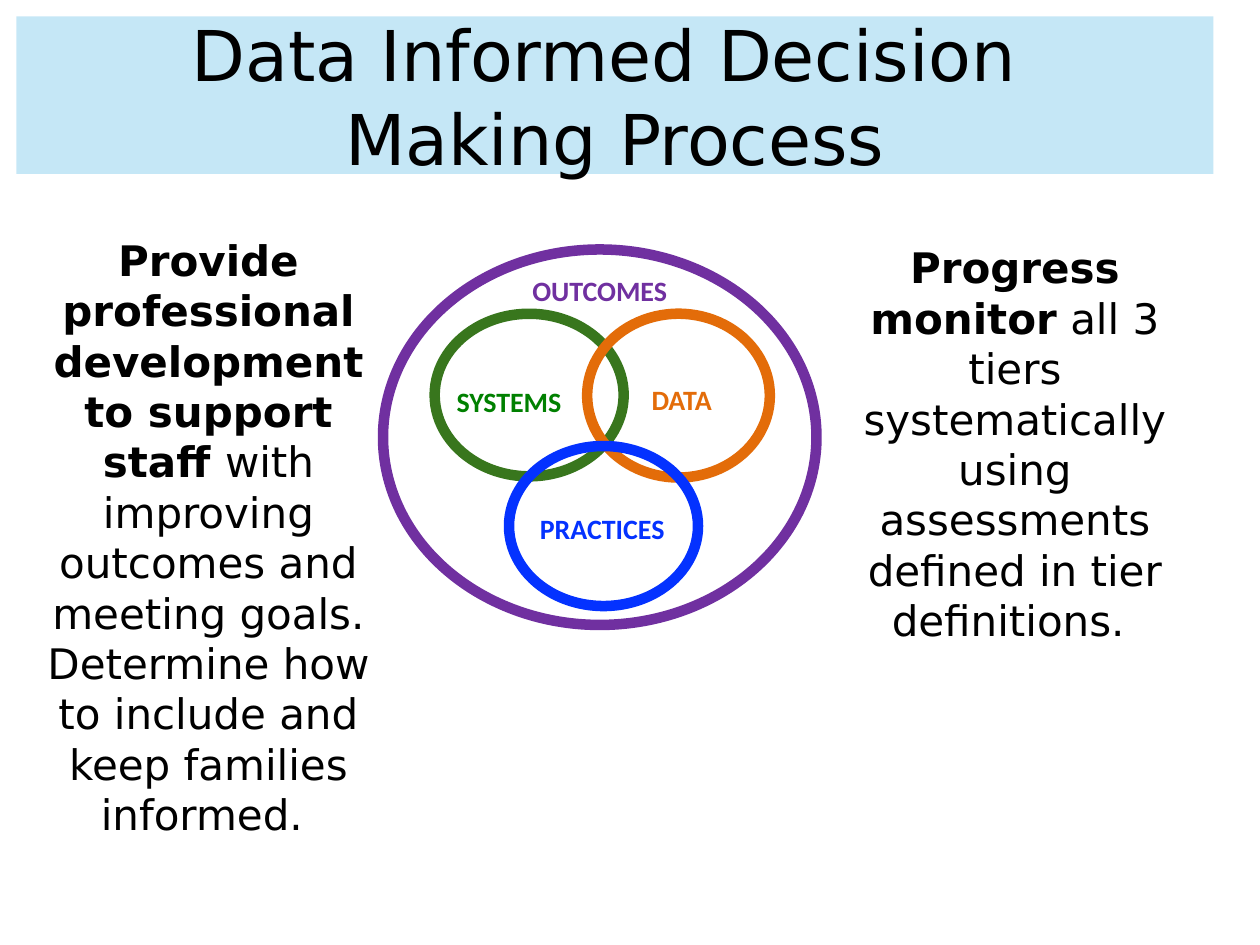
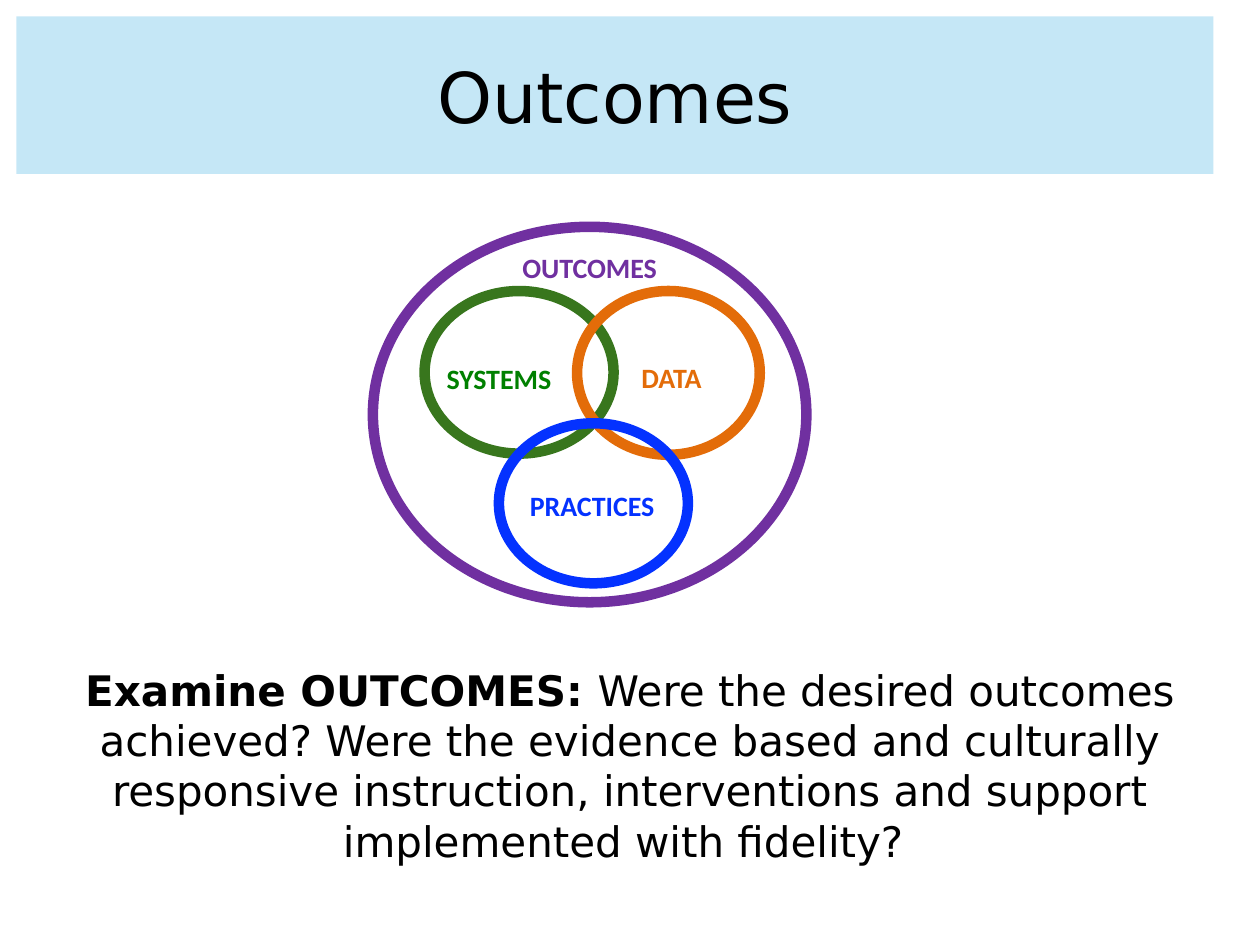
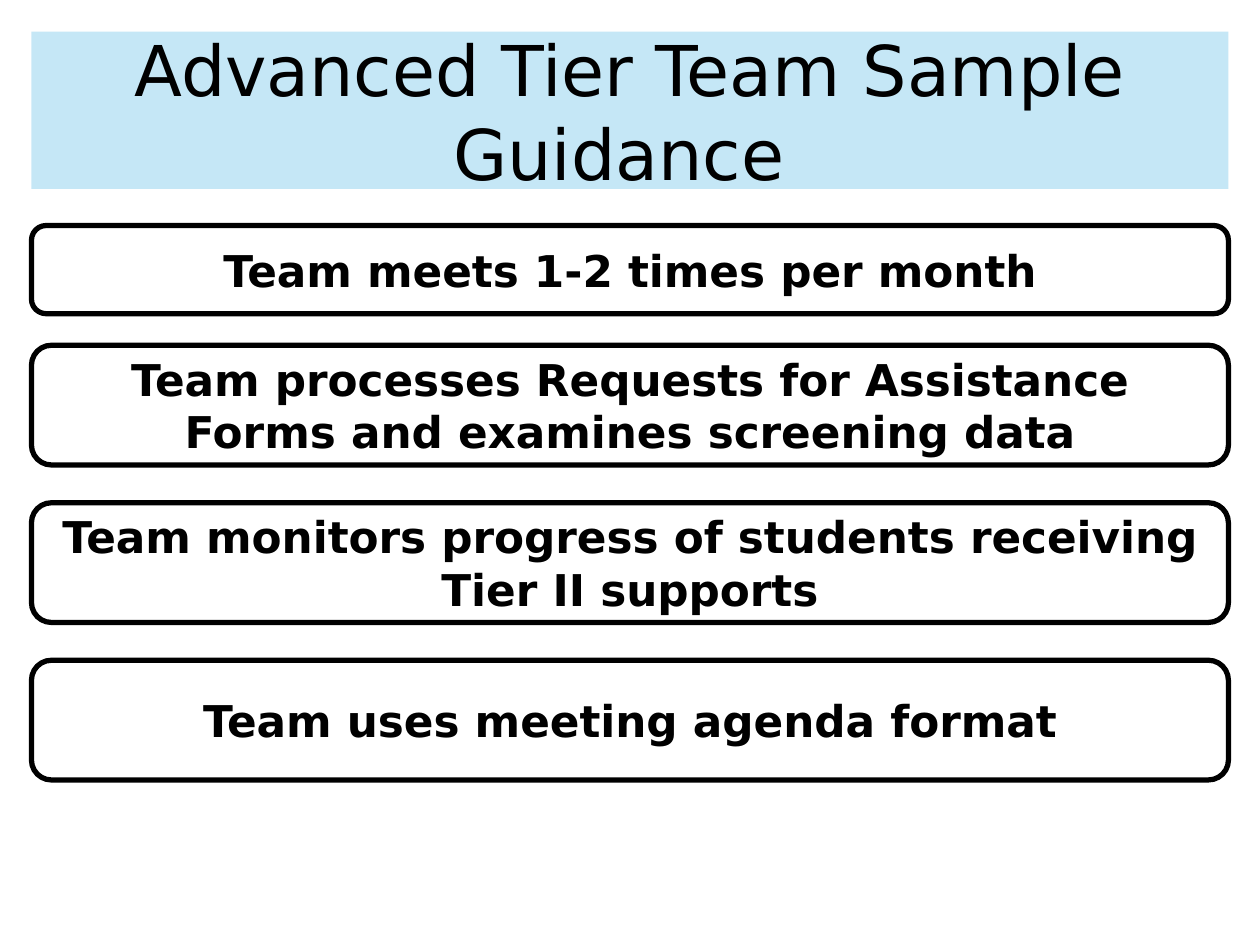
from typing import NamedTuple

from lxml.etree import SubElement
from pptx import Presentation
from pptx.dml.color import RGBColor
from pptx.enum.shapes import MSO_SHAPE
from pptx.enum.text import MSO_ANCHOR, PP_ALIGN
from pptx.oxml.ns import qn
from pptx.util import Inches, Pt

# Shared look
BLACK = RGBColor(0x00, 0x00, 0x00)
BAND_BLUE = RGBColor(0xA9, 0xDC, 0xF2)
PURPLE = RGBColor(0x70, 0x30, 0xA0)
RING_GREEN = RGBColor(0x38, 0x76, 0x1D)
LABEL_GREEN = RGBColor(0x00, 0x80, 0x00)
ORANGE = RGBColor(0xE3, 0x6C, 0x09)
BLUE = RGBColor(0x04, 0x32, 0xFF)
BODY_FONT = "DejaVu Sans"
LABEL_FONT = "Calibri"
BAND_OPACITY = 67


class Box(NamedTuple):
    left: float
    top: float
    width: float
    height: float

    def lengths(self) -> list:
        return [Inches(side) for side in self]

    def shifted(self, left: float, top: float) -> "Box":
        return Box(self.left + left, self.top + top, self.width, self.height)


class Circle(NamedTuple):
    """A ring and its label, placed from the diagram's top left corner."""
    label: str
    ring: Box
    ring_color: RGBColor
    label_box: Box
    label_color: RGBColor


CIRCLES = [
    Circle("OUTCOMES", Box(0, 0, 3.44, 2.98), PURPLE, Box(0.85, 0.09, 1.74, 0.4), PURPLE),
    Circle("SYSTEMS", Box(0.41, 0.51, 1.5, 1.29), RING_GREEN, Box(0.41, 0.97, 1.18, 0.4), LABEL_GREEN),
    Circle("DATA", Box(1.62, 0.51, 1.45, 1.3), ORANGE, Box(1.91, 0.96, 0.92, 0.4), ORANGE),
    Circle("PRACTICES", Box(1, 1.56, 1.5, 1.27), BLUE, Box(1.06, 1.98, 1.36, 0.4), BLUE),
]


def set_text(shape, text: str, size: float, color: RGBColor = BLACK, font: str = BODY_FONT,
             bold: bool = False, lead: str = "", anchor=MSO_ANCHOR.TOP, inset: float = 0.1) -> None:
    """Write one centred paragraph, opening with a bold lead if there is one."""
    frame = shape.text_frame
    frame.word_wrap = True
    frame.vertical_anchor = anchor
    frame.margin_left = frame.margin_right = Inches(0.1)
    frame.margin_top = frame.margin_bottom = Inches(inset)
    paragraph = frame.paragraphs[0]
    paragraph.text = text
    paragraph.alignment = PP_ALIGN.CENTER
    paragraph.font.name = font
    paragraph.font.size = Pt(size)
    paragraph.font.bold = bold
    paragraph.font.color.rgb = color
    if lead:
        paragraph.text = lead
        paragraph.runs[0].font.bold = True
        paragraph.add_run().text = text


def add_outline(shapes, preset: MSO_SHAPE, box: Box, color: RGBColor, width: float):
    outline = shapes.add_shape(preset, *box.lengths())
    outline.shadow.inherit = False
    outline.fill.background()
    outline.line.color.rgb = color
    outline.line.width = Pt(width)
    return outline


def add_title(slide, title: str, margin: float = 0.13) -> None:
    band = slide.shapes.add_shape(MSO_SHAPE.RECTANGLE, *Box(margin, margin, 9.5, 1.25).lengths())
    band.shadow.inherit = False
    band.line.fill.background()
    band.fill.solid()
    band.fill.fore_color.rgb = BAND_BLUE
    color = band._element.spPr.find(qn("a:solidFill"))[0]
    SubElement(color, qn("a:alpha"), val=str(BAND_OPACITY * 1000))
    set_text(band, title, 40, anchor=MSO_ANCHOR.MIDDLE, inset=0.05)


def add_diagram(slide, left: float, top: float) -> None:
    shapes = slide.shapes.add_group_shape().shapes
    for circle in CIRCLES:
        add_outline(shapes, MSO_SHAPE.OVAL, circle.ring.shifted(left, top), circle.ring_color, 6)
    for circle in CIRCLES:
        label = shapes.add_textbox(*circle.label_box.shifted(left, top).lengths())
        set_text(label, circle.label, 16, circle.label_color, LABEL_FONT, bold=True)


def add_body(slide, box: Box, lead: str, text: str) -> None:
    set_text(slide.shapes.add_textbox(*box.lengths()), text, 24, lead=lead)


def add_guidance(slide, box: Box, text: str) -> None:
    card = add_outline(slide.shapes, MSO_SHAPE.ROUNDED_RECTANGLE, box, BLACK, 3)
    set_text(card, text, 25, bold=True, anchor=MSO_ANCHOR.MIDDLE)


def main() -> None:
    deck = Presentation()
    deck.slide_width, deck.slide_height = Inches(10), Inches(7.5)
    blank = deck.slide_layouts[6]

    # Decision making process
    process = deck.slides.add_slide(blank)
    add_title(process, "Data Informed Decision \vMaking Process")
    add_diagram(process, 3.04, 1.98)
    add_body(process, Box(6.67, 1.82, 2.77, 3.84), "Progress monitor",
             " all 3 tiers systematically using assessments defined in tier definitions. ")
    add_body(process, Box(0.27, 1.76, 2.77, 0.62),
             "Provide professional development to support staff ",
             "with improving outcomes and meeting goals. "
             "Determine how to include and keep families informed. ")

    # Outcomes
    outcomes = deck.slides.add_slide(blank)
    add_title(outcomes, "Outcomes")
    add_diagram(outcomes, 2.96, 1.8)
    add_body(outcomes, Box(0.37, 5.17, 9.26, 0.62), "Examine OUTCOMES: ",
             "Were the desired outcomes achieved? Were the evidence based and culturally "
             "responsive instruction, interventions and support implemented with fidelity? ")

    # Team guidance: a low first card, then taller ones at an even pitch
    guidance = deck.slides.add_slide(blank)
    add_title(guidance, "Advanced Tier Team Sample Guidance ", margin=0.25)
    add_guidance(guidance, Box(0.25, 1.79, 9.5, 0.7), "Team meets 1-2 times per month")
    for row, duty in enumerate([
        "Team processes Requests for Assistance Forms and examines screening data",
        "Team monitors progress of students receiving Tier II supports",
        "Team uses meeting agenda format",
    ]):
        add_guidance(guidance, Box(0.25, 2.74 + 1.25 * row, 9.5, 0.95), duty)

    deck.save("out.pptx")


if __name__ == "__main__":
    main()
